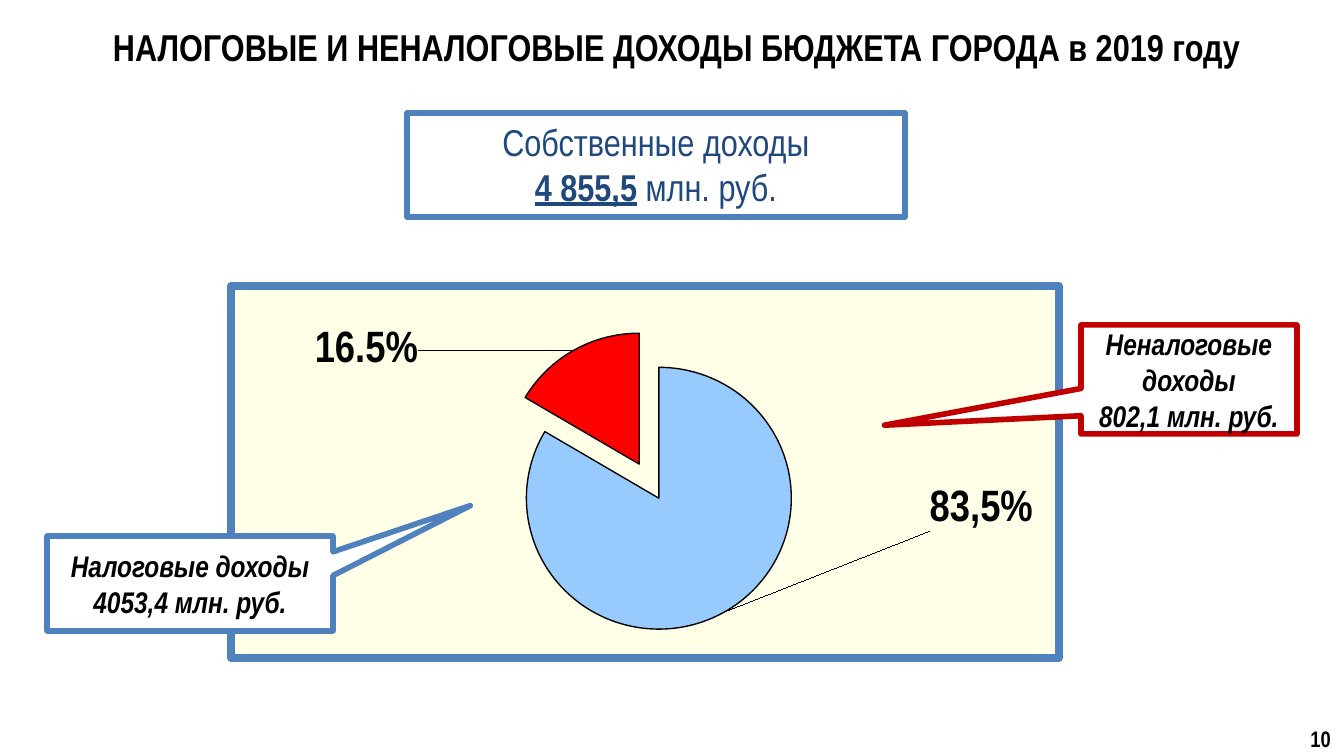
"""Build a slide on the city's own revenues with an exploded pie chart."""
from dataclasses import dataclass

from pptx import Presentation
from pptx.chart.data import CategoryChartData
from pptx.dml.color import RGBColor
from pptx.enum.chart import XL_CHART_TYPE, XL_LABEL_POSITION
from pptx.enum.shapes import MSO_SHAPE
from pptx.enum.text import MSO_ANCHOR, PP_ALIGN
from pptx.oxml import parse_xml
from pptx.oxml.ns import nsdecls
from pptx.util import Pt

SCALE = 914400 / 134.4


def px(*sizes):
    return [round(size * SCALE) for size in sizes]


@dataclass(frozen=True)
class Theme:
    font: str = "Arial Narrow"
    black: str = "000000"
    white: str = "FFFFFF"
    navy: str = "1F497D"
    blue: str = "4F81BD"
    crimson: str = "C00000"
    cream: str = "FFFFE7"
    sky: str = "97CBFF"
    red: str = "FF0000"
    title: int = 20
    note: int = 16
    label: int = 24
    chart: int = 18
    page: int = 12
    edge: float = 3
    frame: float = 4.5
    thin: float = 0.75


class Board:
    def __init__(self, slide, theme):
        self.slide = slide
        self.theme = theme

    def style(self, font, size, color, bold=False, italic=False):
        font.name = self.theme.font
        font.size = Pt(size)
        font.bold = bold
        font.italic = italic
        font.color.rgb = RGBColor.from_string(color)

    def letter(self, shape, text, size, color, align=PP_ALIGN.CENTER,
               anchor=MSO_ANCHOR.MIDDLE, bold=True, italic=False):
        frame = shape.text_frame
        frame.word_wrap = True
        frame.vertical_anchor = anchor
        frame.text = text
        for line in frame.paragraphs:
            line.alignment = align
            for run in line.runs:
                self.style(run.font, size, color, bold, italic)
        return frame

    def text(self, box, text, size, **look):
        shape = self.slide.shapes.add_textbox(*px(*box))
        return self.letter(shape, text, size, self.theme.black, **look)

    def shape(self, kind, box, edge):
        shape = self.slide.shapes.add_shape(kind, *px(*box))
        shape.shadow.inherit = False
        shape.fill.solid()
        shape.fill.fore_color.rgb = RGBColor.from_string(self.theme.white)
        shape.line.color.rgb = RGBColor.from_string(edge)
        shape.line.width = Pt(self.theme.edge)
        return shape

    def total(self, box, head, value, unit):
        look = self.theme
        shape = self.shape(MSO_SHAPE.RECTANGLE, box, look.blue)
        frame = self.letter(shape, f"{head}\n{value}", look.title, look.navy,
                            anchor=MSO_ANCHOR.TOP, bold=False)
        line = frame.paragraphs[1]
        line.runs[0].font.bold = True
        line.runs[0].font.underline = True
        run = line.add_run()
        run.text = f" {unit}"
        self.style(run.font, look.title, look.navy)

    def callout(self, box, tip, edge, text):
        shape = self.shape(MSO_SHAPE.RECTANGULAR_CALLOUT, box, edge)
        for index, value in enumerate(tip):
            shape.adjustments[index] = value
        self.letter(shape, text, self.theme.note, self.theme.black, italic=True)

    def layout(self, **parts):
        tags = "".join(f'<c:{tag} val="{val}"/>' for tag, val in parts.items())
        return parse_xml(f'<c:layout {nsdecls("c")}><c:manualLayout>{tags}'
                         '</c:manualLayout></c:layout>')

    def pie(self, box, slices, plot):
        look = self.theme
        data = CategoryChartData()
        data.categories = [str(n + 1) for n in range(len(slices))]
        data.add_series("Series 1", [part[0] for part in slices])
        chart = self.slide.shapes.add_chart(XL_CHART_TYPE.PIE, *px(*box), data).chart
        chart.has_legend = False
        chart.has_title = False
        self.style(chart.font, look.chart, look.black)
        root = chart.element
        root.xpath("./c:chart")[0].addnext(parse_xml(
            f'<c:spPr {nsdecls("c", "a")}><a:solidFill><a:srgbClr val="{look.cream}"/>'
            f'</a:solidFill><a:ln w="{Pt(look.frame)}"><a:solidFill>'
            f'<a:srgbClr val="{look.blue}"/></a:solidFill><a:round/></a:ln></c:spPr>'))
        area = root.xpath(".//c:plotArea")[0]
        for old in area.xpath("./c:layout"):
            area.remove(old)
        left, top, width, height = plot
        area.insert(0, self.layout(layoutTarget="inner", xMode="edge", yMode="edge",
                                   x=left, y=top, w=width, h=height))
        chart.plots[0].vary_by_categories = True
        series = chart.plots[0].series[0]
        tags = series.data_labels
        tags.show_value = False
        tags.show_percentage = True
        tags.number_format = "0.0%"
        tags.number_format_is_linked = False
        self.style(tags.font, look.label, look.black, bold=True)
        for index, (_, color, shift, text) in enumerate(slices):
            point = series.points[index]
            point.format.fill.solid()
            point.format.fill.fore_color.rgb = RGBColor.from_string(color)
            point.format.line.color.rgb = RGBColor.from_string(look.black)
            point.format.line.width = Pt(look.thin)
            self.label(root, point.data_label, index, shift, text)
        for mark in root.xpath(".//c:ser/c:dPt[1] | .//c:dPt/c:spPr"):
            mark.addprevious(parse_xml(f'<c:explosion {nsdecls("c")} val="15"/>'))

    def label(self, root, label, index, shift, text):
        look = self.theme
        label.position = XL_LABEL_POSITION.CENTER
        self.style(label.font, look.label, look.black, bold=True)
        tag = root.xpath(f".//c:dLbl[c:idx/@val='{index}']")[0]
        tag.xpath("./c:showVal")[0].set("val", "0")
        tag.xpath("./c:showPercent")[0].set("val", "1")
        mark = tag.xpath("./c:idx")[0]
        mark.addnext(parse_xml(
            f'<c:numFmt {nsdecls("c")} formatCode="0.0%" sourceLinked="0"/>'))
        mark.addnext(self.layout(x=shift[0], y=shift[1]))
        if text:
            label.text_frame.text = text
            run = label.text_frame.paragraphs[0].runs[0]
            self.style(run.font, look.label, look.black, bold=True)


def main():
    deck = Presentation()
    deck.slide_width, deck.slide_height = px(1344, 756)
    look = Theme()
    board = Board(deck.slides.add_slide(deck.slide_layouts[6]), look)
    board.total((407, 113, 498, 104), "Собственные доходы", "4 855,5", "млн. руб.")
    title = board.text(
        (27, 13, 1300, 58),
        "НАЛОГОВЫЕ И НЕНАЛОГОВЫЕ ДОХОДЫ БЮДЖЕТА ГОРОДА в 2019 году", look.title)
    title.paragraphs[0].line_spacing = 1.2
    board.pie((227, 282, 836, 380),
              [(83.5, look.sky, (0.35, -0.12), "83,5%"),
               (16.5, look.red, (-0.29, -0.15), None)],
              (0.01, 0.12, 0.99, 0.81))
    board.text((1292, 719, 52, 32), "10", look.page,
               align=PP_ALIGN.RIGHT, anchor=MSO_ANCHOR.TOP)
    board.callout((47, 536, 286, 95), (0.98, -0.82), look.blue,
                  "Налоговые доходы\n4053,4 млн. руб.")
    board.callout((1081, 325, 216, 109), (-1.41, 0.42), look.crimson,
                  "Неналоговые доходы\n802,1 млн. руб.")
    deck.save("out.pptx")


if __name__ == "__main__":
    main()
